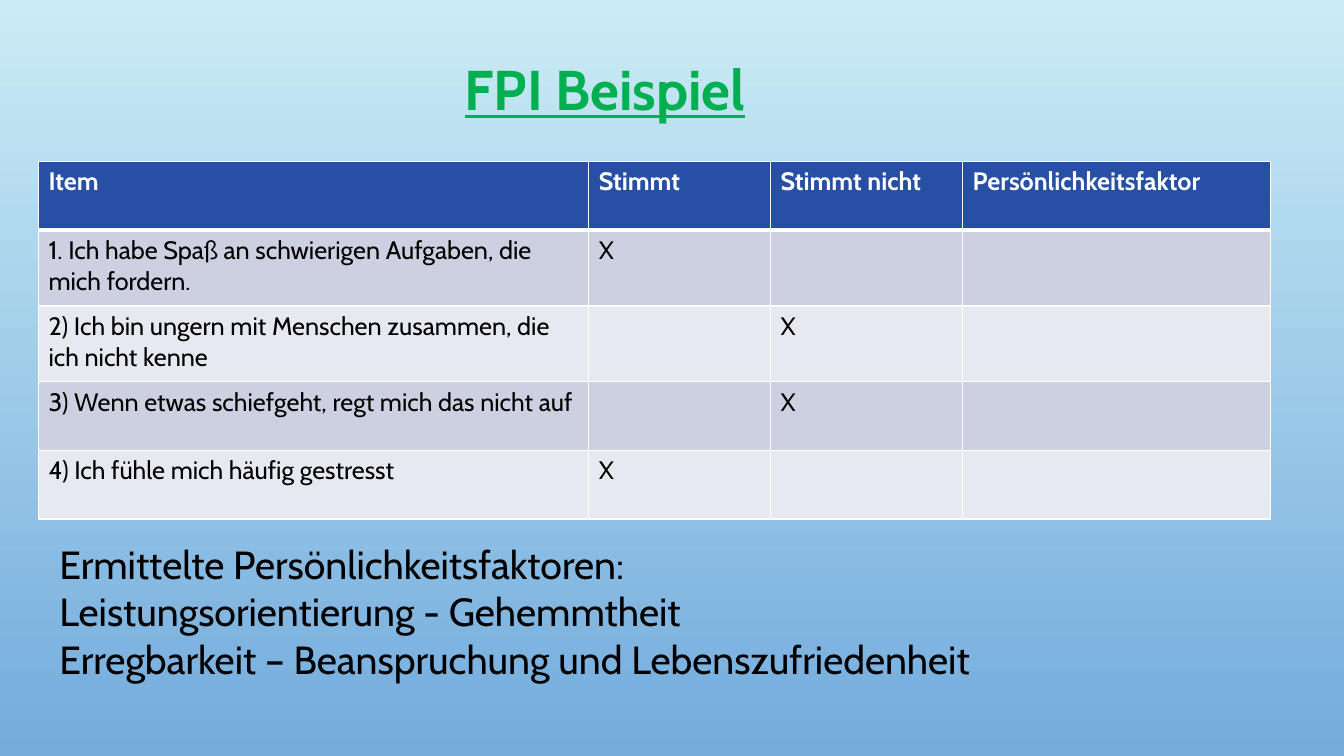
from lxml import etree
from pptx import Presentation
from pptx.dml.color import RGBColor
from pptx.enum.text import MSO_AUTO_SIZE, PP_ALIGN
from pptx.oxml.ns import qn
from pptx.util import Cm, Pt

CENTER = PP_ALIGN.CENTER
LEFT = PP_ALIGN.LEFT
GROW = MSO_AUTO_SIZE.SHAPE_TO_FIT_TEXT

SKY = RGBColor(0xCB, 0xEC, 0xF5)
BLUE = RGBColor(0x73, 0xAB, 0xDD)
NAVY = RGBColor(0x27, 0x4F, 0xA4)
DARK_BAND = RGBColor(0xCD, 0xD0, 0xE0)
LIGHT_BAND = RGBColor(0xE8, 0xE9, 0xF0)
GREEN = RGBColor(0x00, 0xB0, 0x50)
WHITE = RGBColor(0xFF, 0xFF, 0xFF)
BLACK = RGBColor(0x00, 0x00, 0x00)


def write(frame, text, size=18, color=BLACK, bold=False, underline=False, align=LEFT):
    frame.word_wrap = True
    frame.text = text
    for para in frame.paragraphs:
        para.alignment = align
        for span in para.runs:
            span.font.name = "Cabin"
            span.font.size = Pt(size)
            span.font.color.rgb = color
            span.font.bold = bold
            span.font.underline = underline


def add_borders(cell, bottom):
    props = cell._tc.get_or_add_tcPr()
    for side, width in (("L", 1), ("R", 1), ("T", 1), ("B", bottom)):
        line = etree.SubElement(props, qn(f"a:ln{side}"), w=str(Pt(width)))
        solid = etree.SubElement(line, qn("a:solidFill"))
        etree.SubElement(solid, qn("a:srgbClr"), val=str(WHITE))


deck = Presentation()
deck.slide_width = Cm(33.87)
deck.slide_height = Cm(19.05)
page = deck.slides.add_slide(deck.slide_layouts[6])

backdrop = page.background.fill
backdrop.gradient()
backdrop.gradient_angle = 270
for stop, color, position in zip(backdrop.gradient_stops, (SKY, BLUE), (0, 1)):
    stop.color.rgb = color
    stop.position = position

rows = [
    ("Item", "Stimmt", "Stimmt nicht", "Persönlichkeitsfaktor"),
    ("1. Ich habe Spaß an schwierigen Aufgaben, die mich fordern.", "X", "", ""),
    ("2) Ich bin ungern mit Menschen zusammen, die ich nicht kenne", "", "X", ""),
    ("3) Wenn etwas schiefgeht, regt mich das nicht auf", "", "X", ""),
    ("4) Ich fühle mich häufig gestresst", "X", "", ""),
]
column_widths = (13.87, 4.58, 4.84, 7.76)
row_heights = (1.73, 1.91, 1.91, 1.73, 1.73)

table = page.shapes.add_table(
    len(rows), len(column_widths), Cm(0.97), Cm(4.07),
    Cm(sum(column_widths)), Cm(sum(row_heights)),
).table
for column, width in zip(table.columns, column_widths):
    column.width = Cm(width)

for row_index, texts in enumerate(rows):
    table.rows[row_index].height = Cm(row_heights[row_index])
    header = row_index == 0
    band = DARK_BAND if row_index % 2 else LIGHT_BAND
    for column_index, text in enumerate(texts):
        cell = table.cell(row_index, column_index)
        add_borders(cell, bottom=3 if header else 1)
        cell.fill.solid()
        cell.fill.fore_color.rgb = NAVY if header else band
        if text:
            write(cell.text_frame, text, color=WHITE if header else BLACK, bold=header)

title_box = page.shapes.add_textbox(Cm(5.1), Cm(1.25), Cm(20.3), Cm(1.96))
title_box.text_frame.auto_size = GROW
write(title_box.text_frame, "FPI Beispiel", size=40, color=GREEN,
      bold=True, underline=True, align=CENTER)

factors = [
    "Ermittelte Persönlichkeitsfaktoren:",
    "Leistungsorientierung - Gehemmtheit",
    "Erregbarkeit – Beanspruchung und Lebenszufriedenheit",
]
factor_box = page.shapes.add_textbox(Cm(1.25), Cm(13.5), Cm(30.8), Cm(4.62))
factor_box.text_frame.auto_size = GROW
write(factor_box.text_frame, "\n".join(factors), size=28)

deck.save("out.pptx")
